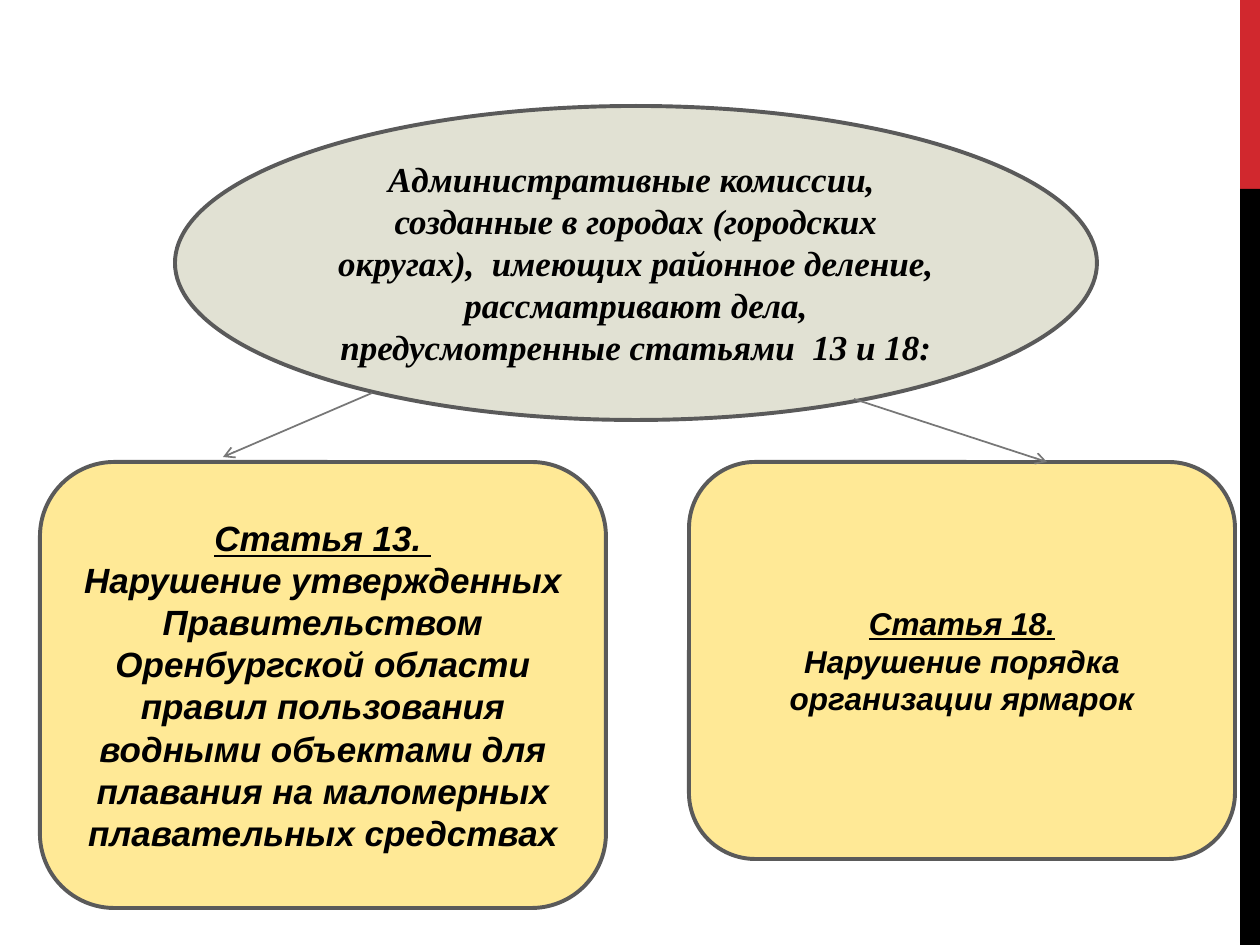
from dataclasses import dataclass

import pptx
import pptx.dml.color
import pptx.enum.shapes
import pptx.enum.text
import pptx.oxml
import pptx.oxml.ns
import pptx.util

RGB = pptx.dml.color.RGBColor
SHAPE = pptx.enum.shapes.MSO_SHAPE

RED = RGB(0xD1, 0x28, 0x2E)
BLACK = RGB(0x00, 0x00, 0x00)
STONE = RGB(0xE1, 0xE1, 0xD3)
YELLOW = RGB(0xFF, 0xE9, 0x96)
OUTLINE = RGB(0x5A, 0x5A, 0x5A)
ARROW_GRAY = RGB(0x77, 0x77, 0x77)

PX_PER_INCH = 126
WIDTH, HEIGHT = 1260, 945
BAR_LEFT, BAR_SPLIT = 1240, 189
BOX_TOP = 462


@dataclass(frozen=True)
class Block:
    kind: int
    left: int
    top: int
    width: int
    height: int
    fill: RGB
    body: str = ""
    heading: str = ""
    font: str = "Arial"
    size: int = 20
    outlined: bool = True


@dataclass(frozen=True)
class Arrow:
    start: tuple[int, int]
    end: tuple[int, int]


BLOCKS = [
    Block(SHAPE.RECTANGLE, BAR_LEFT, 0, WIDTH - BAR_LEFT, BAR_SPLIT, RED, outlined=False),
    Block(SHAPE.RECTANGLE, BAR_LEFT, BAR_SPLIT, WIDTH - BAR_LEFT, HEIGHT - BAR_SPLIT, BLACK,
          outlined=False),
    Block(SHAPE.OVAL, 175, 106, 922, 314, STONE,
          "Административные комиссии,  созданные в городах (городских округах),  "
          "имеющих районное деление, рассматривают дела, предусмотренные статьями  13 и 18:",
          font="Times New Roman"),
    Block(SHAPE.ROUNDED_RECTANGLE, 40, BOX_TOP, 566, 446, YELLOW,
          "Нарушение утвержденных Правительством Оренбургской области правил пользования "
          "водными объектами для плавания на маломерных плавательных средствах",
          heading="Статья 13. "),
    Block(SHAPE.ROUNDED_RECTANGLE, 689, BOX_TOP, 546, 397, YELLOW,
          "Нарушение порядка организации ярмарок", heading="Статья 18.", size=18),
]

ARROWS = [
    Arrow((372, 393), (223, 457)),
    Arrow((854, 399), (1047, BOX_TOP)),
]


def px(length: int) -> int:
    return pptx.util.Emu(round(length * pptx.util.Inches(1) / PX_PER_INCH))


def write_text(box, block: Block) -> None:
    frame = box.text_frame
    frame.word_wrap = True
    frame.vertical_anchor = pptx.enum.text.MSO_ANCHOR.MIDDLE
    frame.text = "\n".join(filter(None, (block.heading, block.body)))
    for para in frame.paragraphs:
        para.alignment = pptx.enum.text.PP_ALIGN.CENTER
        for span in para.runs:
            font = span.font
            font.name = block.font
            font.size = pptx.util.Pt(block.size)
            font.bold = font.italic = True
            font.underline = span.text == block.heading
            font.color.rgb = BLACK


def draw_block(page, block: Block) -> None:
    box = page.shapes.add_shape(
        block.kind, px(block.left), px(block.top), px(block.width), px(block.height))
    box.shadow.inherit = False
    box.fill.solid()
    box.fill.fore_color.rgb = block.fill
    if block.outlined:
        box.line.color.rgb = OUTLINE
        box.line.width = pptx.util.Pt(2.25)
    else:
        box.line.fill.background()
    if block.body:
        write_text(box, block)


def draw_arrow(page, arrow: Arrow) -> None:
    connector = page.shapes.add_connector(
        pptx.enum.shapes.MSO_CONNECTOR.STRAIGHT,
        *map(px, arrow.start), *map(px, arrow.end))
    connector.line.color.rgb = ARROW_GRAY
    connector.line.width = pptx.util.Pt(1)
    namespace = pptx.oxml.ns.nsdecls("a")
    connector.line._get_or_add_ln().append(
        pptx.oxml.parse_xml(f'<a:tailEnd {namespace} type="arrow"/>'))
    connector._element.spPr.append(pptx.oxml.parse_xml(f"<a:effectLst {namespace}/>"))


def main() -> None:
    deck = pptx.Presentation()
    deck.slide_width, deck.slide_height = px(WIDTH), px(HEIGHT)
    page = deck.slides.add_slide(deck.slide_layouts.get_by_name("Blank"))
    for block in BLOCKS:
        draw_block(page, block)
    for arrow in ARROWS:
        draw_arrow(page, arrow)
    deck.save("out.pptx")


if __name__ == "__main__":
    main()
